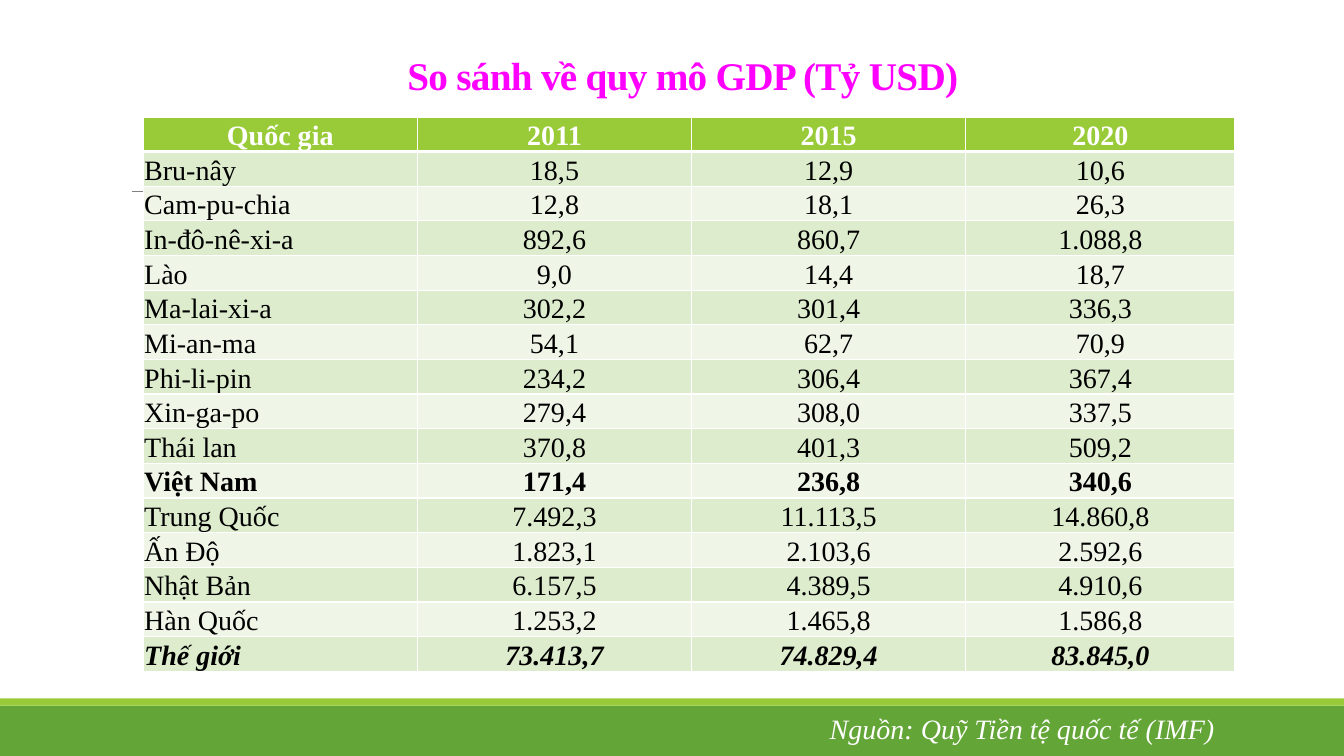
from lxml.etree import SubElement
from pptx import Presentation
from pptx.dml.color import RGBColor
from pptx.enum.shapes import MSO_CONNECTOR, MSO_SHAPE
from pptx.enum.text import MSO_ANCHOR, PP_ALIGN
from pptx.oxml.ns import qn
from pptx.util import Pt

PX = 9144  # 100 px to the inch
COLORS = {
    "white": "FFFFFF", "black": "000000", "grey": "808080", "magenta": "FF00FF",
    "green": "63A537", "lime": "99CB38", "odd": "DEECCE", "even": "EFF6E8",
}
HEADER = ["Quốc gia", "2011", "2015", "2020"]
GDP = [
    ["Bru-nây", "18,5", "12,9", "10,6"],
    ["Cam-pu-chia", "12,8", "18,1", "26,3"],
    ["In-đô-nê-xi-a", "892,6", "860,7", "1.088,8"],
    ["Lào", "9,0", "14,4", "18,7"],
    ["Ma-lai-xi-a", "302,2", "301,4", "336,3"],
    ["Mi-an-ma", "54,1", "62,7", "70,9"],
    ["Phi-li-pin", "234,2", "306,4", "367,4"],
    ["Xin-ga-po", "279,4", "308,0", "337,5"],
    ["Thái lan", "370,8", "401,3", "509,2"],
    ["Việt Nam", "171,4", "236,8", "340,6"],
    ["Trung Quốc", "7.492,3", "11.113,5", "14.860,8"],
    ["Ấn Độ", "1.823,1", "2.103,6", "2.592,6"],
    ["Nhật Bản", "6.157,5", "4.389,5", "4.910,6"],
    ["Hàn Quốc", "1.253,2", "1.465,8", "1.586,8"],
    ["Thế giới", "73.413,7", "74.829,4", "83.845,0"],
]


def rgb(name):
    return RGBColor.from_string(COLORS[name])


def write(tf, text, size=20, color="black", bold=False, italic=False, align=PP_ALIGN.LEFT):
    p = tf.paragraphs[0]
    p.alignment = align
    r = p.add_run()
    r.text = text
    r.font.name = "Times New Roman"
    r.font.size = Pt(size)
    r.font.bold = bold
    r.font.italic = italic
    r.font.color.rgb = rgb(color)
    return p


prs = Presentation()
prs.slide_width, prs.slide_height = 1333 * PX, 750 * PX
s = prs.slides.add_slide(prs.slide_layouts[6])

# Footer bands
for top, height, color in [(700, 50, "green"), (693, 7, "lime")]:
    sp = s.shapes.add_shape(MSO_SHAPE.RECTANGLE, 0, top * PX, 1333 * PX, height * PX)
    sp.shadow.inherit = False
    sp.fill.solid()
    sp.fill.fore_color.rgb = rgb(color)
    sp.line.fill.background()

# Rule behind the table
rule = s.shapes.add_connector(MSO_CONNECTOR.STRAIGHT, 131 * PX, 190 * PX, 1221 * PX, 190 * PX)
rule.line.color.rgb = rgb("grey")
rule.line.width = Pt(0.5)
SubElement(rule._element.spPr, qn("a:effectLst"))

# Title
title = s.shapes.add_textbox(97 * PX, 28 * PX, 1160 * PX, 75 * PX)
title.fill.solid()
title.fill.fore_color.rgb = rgb("white")
tf = title.text_frame
tf.word_wrap = True
tf.vertical_anchor = MSO_ANCHOR.BOTTOM
p = write(tf, "So sánh về quy mô GDP (Tỷ USD)", size=28, color="magenta", bold=True,
          align=PP_ALIGN.CENTER)
p.line_spacing = 1.5
p.runs[0].font._element.set("spc", "-50")

# GDP table
rows = [HEADER] + GDP
table = s.shapes.add_table(len(rows), len(HEADER), 142 * PX, 116 * PX, 1083 * PX, 531 * PX).table
table.first_row = table.horz_banding = False
for column, width in zip(table.columns, [272, 272, 272, 267]):
    column.width = width * PX

for i, row in enumerate(rows):
    fill = "lime" if i == 0 else "odd" if i % 2 else "even"
    for j, text in enumerate(row):
        cell = table.cell(i, j)
        cell.margin_left = cell.margin_right = cell.margin_top = PX
        cell.margin_bottom = 0
        cell.vertical_anchor = MSO_ANCHOR.BOTTOM
        write(cell.text_frame, text,
              color="black" if i else "white",
              bold=i == 0 or row[0] in ("Việt Nam", "Thế giới"),
              italic=row[0] == "Thế giới",
              align=PP_ALIGN.CENTER if i == 0 or j else PP_ALIGN.LEFT)
        # White borders, thicker under the header
        for side in ("lnL", "lnR", "lnT", "lnB"):
            thick = (i, side) in [(0, "lnB"), (1, "lnT")]
            ln = SubElement(cell._tc.get_or_add_tcPr(), qn("a:" + side), w=str(Pt(3 if thick else 1)))
            SubElement(SubElement(ln, qn("a:solidFill")), qn("a:srgbClr"), val=COLORS["white"])
        cell.fill.solid()
        cell.fill.fore_color.rgb = rgb(fill)

# Data credit
tf = s.shapes.add_textbox(813 * PX, 701 * PX, 412 * PX, 44 * PX).text_frame
tf.word_wrap = True
write(tf, "Nguồn: Quỹ Tiền tệ quốc tế (IMF)", color="white", italic=True)

prs.save("out.pptx")
